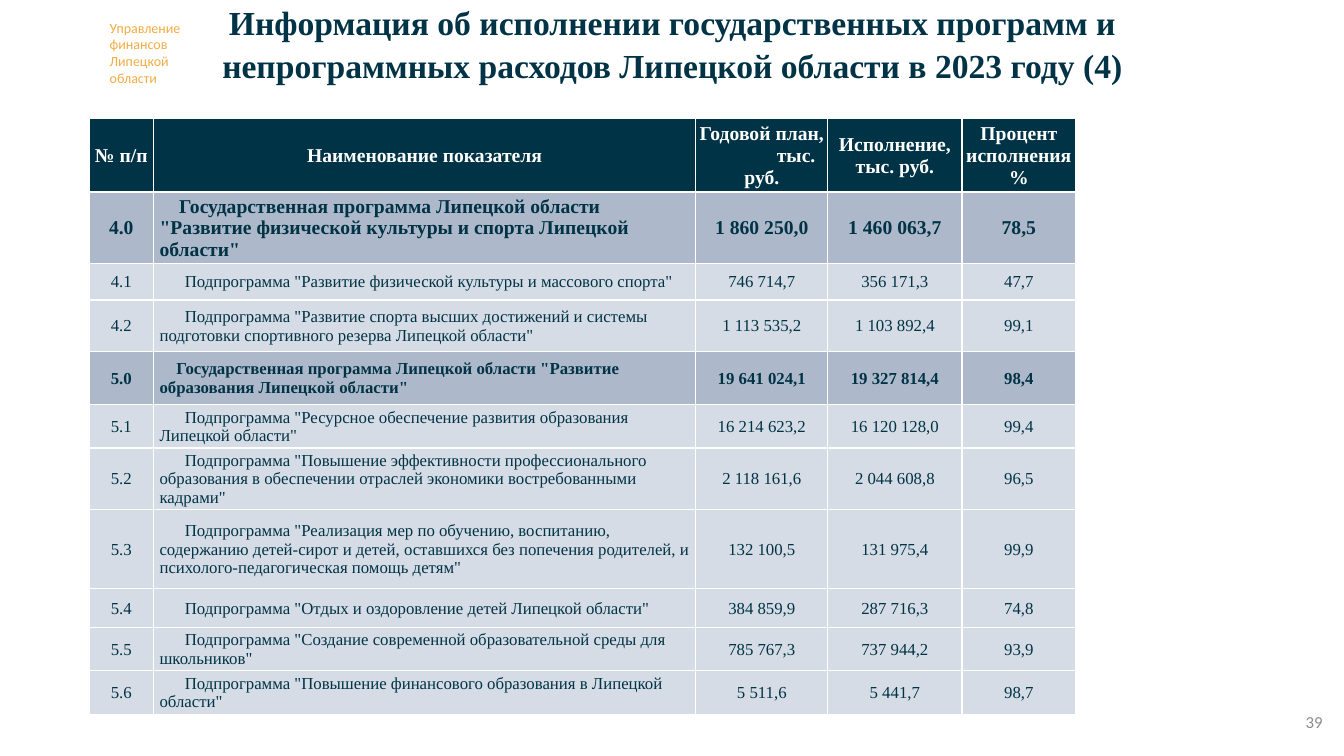
from dataclasses import dataclass

from lxml import etree
from pptx import Presentation
from pptx.dml.color import RGBColor
from pptx.enum import text as txt
from pptx.oxml import ns
from pptx.util import Pt

NAVY = RGBColor(0x00, 0x33, 0x45)
WHITE = RGBColor(0xFF, 0xFF, 0xFF)
ORANGE = RGBColor(0xF2, 0xAC, 0x44)
GREY = RGBColor(0x8C, 0x8C, 0x8C)
PROGRAM_FILL = RGBColor(0xAD, 0xB9, 0xCA)
SUBPROGRAM_FILL = RGBColor(0xD6, 0xDC, 0xE5)
SERIF = "Times New Roman"
SANS = "Calibri"
CENTER = txt.PP_ALIGN.CENTER
LEFT = txt.PP_ALIGN.LEFT
RIGHT = txt.PP_ALIGN.RIGHT
MIDDLE = txt.MSO_ANCHOR.MIDDLE

COLUMN_WIDTHS = [46.08, 387.36, 94.32, 95.76, 81.36]
HEADER_HEIGHT = 52.56
HEADINGS = ["№ п/п", "Наименование показателя", "Годовой план,\nтыс.\nруб.",
            "Исполнение, тыс. руб.", "Процент исполнения %"]


@dataclass
class Style:
    size: float
    color: RGBColor
    font: str = SERIF
    bold: bool = False


@dataclass
class Expense:
    number: str
    name: str
    plan: str
    actual: str
    percent: str
    height: float
    size: float = 12

    @property
    def is_program(self) -> bool:
        return self.number.endswith(".0")

    @property
    def title(self) -> str:
        kind = "Государственная программа Липецкой области" if self.is_program else "Подпрограмма"
        return f'{kind} "{self.name}"'

    @property
    def first_indent(self) -> float:
        return self.size if self.is_program else 1.5 * self.size


EXPENSES = [
    Expense("4.0", "Развитие физической культуры и спорта Липецкой области",
            "1 860 250,0", "1 460 063,7", "78,5", 38.88, 14),
    Expense("4.1", "Развитие физической культуры и массового спорта",
            "746 714,7", "356 171,3", "47,7", 25.92),
    Expense("4.2", "Развитие спорта высших достижений и системы подготовки "
            "спортивного резерва Липецкой области",
            "1 113 535,2", "1 103 892,4", "99,1", 36.72),
    Expense("5.0", "Развитие образования Липецкой области",
            "19 641 024,1", "19 327 814,4", "98,4", 38.16),
    Expense("5.1", "Ресурсное обеспечение развития образования Липецкой области",
            "16 214 623,2", "16 120 128,0", "99,4", 30.96),
    Expense("5.2", "Повышение эффективности профессионального образования в обеспечении "
            "отраслей экономики востребованными кадрами",
            "2 118 161,6", "2 044 608,8", "96,5", 42.48),
    Expense("5.3", "Реализация мер по обучению, воспитанию, содержанию детей-сирот и детей, "
            "оставшихся без попечения родителей, и психолого-педагогическая помощь детям",
            "132 100,5", "131 975,4", "99,9", 56.16),
    Expense("5.4", "Отдых и оздоровление детей Липецкой области",
            "384 859,9", "287 716,3", "74,8", 28.08),
    Expense("5.5", "Создание современной образовательной среды для школьников",
            "785 767,3", "737 944,2", "93,9", 30.96),
    Expense("5.6", "Повышение финансового образования в Липецкой области",
            "5 511,6", "5 441,7", "98,7", 30.96),
]


def write(frame, content: str, style: Style, align) -> None:
    frame.text = content
    frame.word_wrap = True
    for paragraph in frame.paragraphs:
        paragraph.alignment = align
        for run in paragraph.runs:
            run.font.size = Pt(style.size)
            run.font.name = style.font
            run.font.bold = style.bold
            run.font.color.rgb = style.color


def add_label(slide, box: tuple, content: str, style: Style, align, anchor) -> None:
    label = slide.shapes.add_textbox(*map(Pt, box)).text_frame
    write(label, content, style, align)
    label.vertical_anchor = anchor


def set_borders(cell) -> None:
    properties = cell._tc.get_or_add_tcPr()
    for position, side in enumerate(("lnL", "lnR", "lnT", "lnB")):
        line = etree.Element(ns.qn(f"a:{side}"), w=str(Pt(1)))
        fill = etree.SubElement(line, ns.qn("a:solidFill"))
        etree.SubElement(fill, ns.qn("a:srgbClr"), val=str(WHITE))
        properties.insert(position, line)


def fill_cell(cell, content: str, style: Style, fill: RGBColor, align=CENTER) -> None:
    write(cell.text_frame, content, style, align)
    cell.vertical_anchor = MIDDLE
    cell.margin_left = Pt(4.32 if align == LEFT else 0.72)
    cell.margin_right = cell.margin_top = Pt(0.72)
    cell.margin_bottom = 0
    cell.fill.solid()
    cell.fill.fore_color.rgb = fill
    set_borders(cell)


def add_expense_table(slide) -> None:
    heights = [HEADER_HEIGHT] + [expense.height for expense in EXPENSES]
    table = slide.shapes.add_table(
        len(heights), len(COLUMN_WIDTHS), Pt(63.6), Pt(84.6),
        Pt(sum(COLUMN_WIDTHS)), Pt(sum(heights))).table
    table.first_row = table.horz_banding = False
    for column, width in zip(table.columns, COLUMN_WIDTHS):
        column.width = Pt(width)
    for row, height in zip(table.rows, heights):
        row.height = Pt(height)

    # Header row, with the unit of the plan set off to the right
    for column, heading in enumerate(HEADINGS):
        fill_cell(table.cell(0, column), heading, Style(14, WHITE, bold=True), NAVY)
    unit = table.cell(0, 2).text_frame.paragraphs[1]
    unit._p.get_or_add_pPr().set("marL", str(Pt(49)))

    # Programs and subprograms
    for row, expense in enumerate(EXPENSES, start=1):
        style = Style(expense.size, NAVY, bold=expense.is_program)
        fill = PROGRAM_FILL if expense.is_program else SUBPROGRAM_FILL
        values = [expense.number, expense.title, expense.plan, expense.actual, expense.percent]
        for column, value in enumerate(values):
            fill_cell(table.cell(row, column), value, style, fill, LEFT if column == 1 else CENTER)
        name = table.cell(row, 1).text_frame.paragraphs[0]
        name._p.get_or_add_pPr().set("indent", str(Pt(expense.first_indent)))


def add_title(slide) -> None:
    heading = slide.shapes.title
    heading.left, heading.top, heading.width, heading.height = map(Pt, (57.6, -8.64, 845.28, 69.84))
    frame = heading.text_frame
    write(frame, "Информация об исполнении государственных программ и\v"
          "непрограммных расходов Липецкой области в 2023 году (4)",
          Style(24, NAVY, bold=True), CENTER)
    frame.auto_size = txt.MSO_AUTO_SIZE.NONE
    frame.vertical_anchor = txt.MSO_ANCHOR.BOTTOM
    frame.margin_top = frame.margin_bottom = 0
    frame.paragraphs[0].line_spacing = 1.09


def main() -> None:
    deck = Presentation()
    deck.slide_width, deck.slide_height = Pt(960), Pt(540)
    slide = deck.slides.add_slide(deck.slide_layouts[5])

    # Department name, title and page number
    add_label(slide, (71.28, 10.08, 69.84, 55.44), "Управление финансов Липецкой области",
              Style(10, ORANGE, SANS), LEFT, txt.MSO_ANCHOR.TOP)
    add_title(slide)
    add_label(slide, (727.92, 501.12, 223.92, 28.8), "39", Style(12, GREY, SANS), RIGHT, MIDDLE)

    # Execution by program
    add_expense_table(slide)
    deck.save("out.pptx")


if __name__ == "__main__":
    main()
